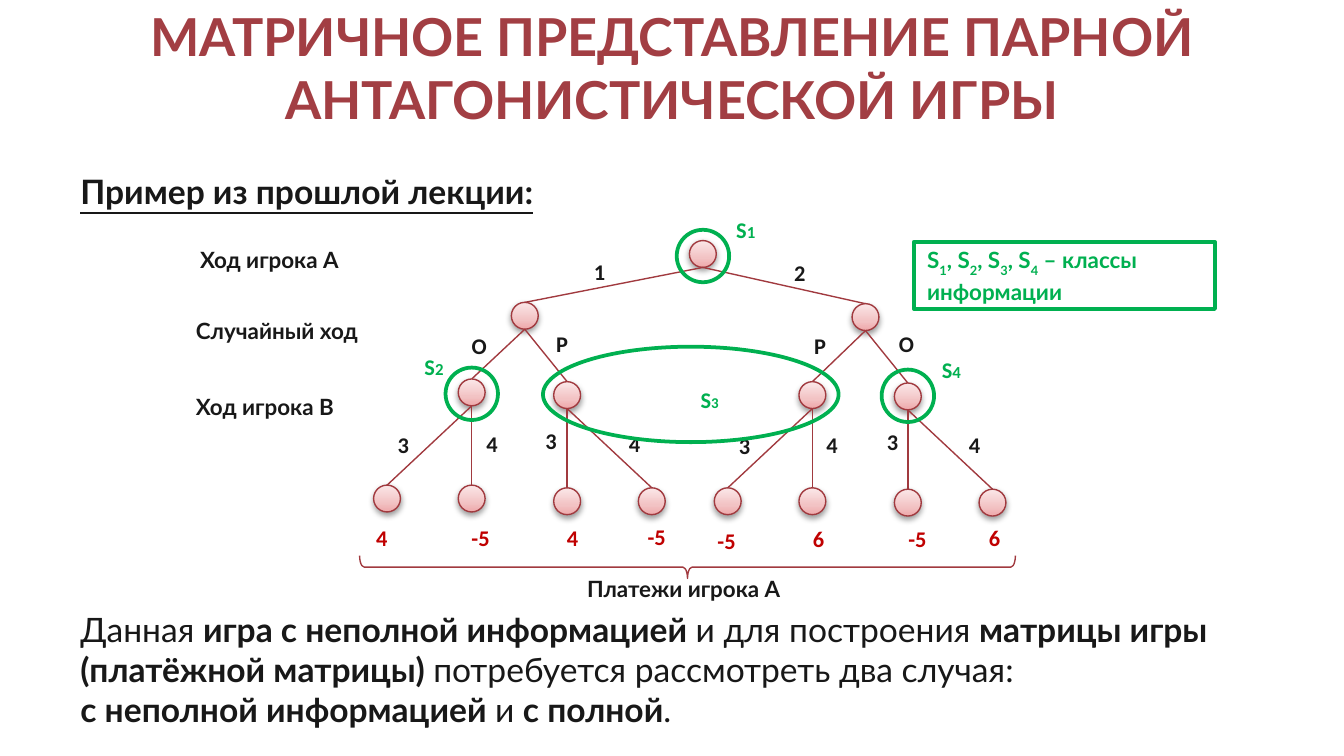
from typing import NamedTuple

from lxml import etree
from pptx import Presentation
from pptx.dml.color import RGBColor
from pptx.enum.shapes import MSO_CONNECTOR, MSO_SHAPE
from pptx.enum.text import MSO_ANCHOR, PP_ALIGN
from pptx.oxml import parse_xml
from pptx.oxml.ns import nsdecls, qn
from pptx.util import Inches, Pt

STRAIGHT = MSO_CONNECTOR.STRAIGHT
NODE_SHAPE, OVAL = MSO_SHAPE.FLOWCHART_CONNECTOR, MSO_SHAPE.OVAL
BOX, BRACE = MSO_SHAPE.RECTANGLE, MSO_SHAPE.RIGHT_BRACE
MIDDLE, LEFT, CENTER = MSO_ANCHOR.MIDDLE, PP_ALIGN.LEFT, PP_ALIGN.CENTER

COLUMNS, ROWS = 100, 56.25
INK, RED, GREEN, WINE, TITLE, WHITE = "181818", "C00000", "00B050", "A13A3F", "A23E43", "FFFFFF"
BLUSH = ((0, "EEA8AA"), (35, "F2C3C4"), (100, "FBE7E8"))
NODE_SIZE, RING_SIZE, LEAF_DROP, LEAF_STEP = 2, 3.9, 7.9, 6.3


class Area(NamedTuple):
    left: float
    top: float
    width: float
    height: float


class Run(NamedTuple):
    text: str
    size: float | None = None
    bold: bool | None = None
    subscript: bool = False


class Style(NamedTuple):
    size: float
    color: str = INK
    bold: bool = True
    face: str = "Lato"
    align: PP_ALIGN = LEFT
    underline: bool = False


class Node(NamedTuple):
    col: float
    row: float


class Label(NamedTuple):
    text: str
    col: float
    row: float


ROOT = Node(52.3, 17.9)
CHANCE = (Node(39.05, 22.5), Node(64.4, 22.6))
INFO = (Node(35.1, 28.2), Node(42.2, 28.4), Node(60.45, 28.4), Node(67.55, 28.5))
LEAF_SIDES = (-1, 1, -1, 1)

MOVES = (
    Label("1", 43.2, 18.7), Label("2", 58.1, 18.8),
    Label("О", 34.1, 24.2), Label("Р", 40.4, 24.1), Label("Р", 59.6, 24.2), Label("О", 65.9, 24.1),
    Label("3", 28.6, 31.6), Label("4", 35.2, 31.5), Label("3", 39.6, 31.3), Label("4", 45.8, 31.5),
    Label("3", 54, 31.7), Label("4", 60.5, 31.6), Label("3", 65, 31.4), Label("4", 71.1, 31.6),
)
PAYOFFS = (
    Label("4", 27, 38.5), Label("-5", 34.1, 38.5), Label("4", 41.2, 38.5), Label("-5", 47.2, 38.4),
    Label("-5", 52.4, 38.7), Label("6", 59.5, 38.6), Label("-5", 66.6, 38.6), Label("6", 72.6, 38.5),
)
CLASSES = (Label("S1", 53.8, 15.6), Label("S2", 30.6, 25.8), Label("S4", 69.1, 26))
RINGS = (Node(50.35, 17.1), Node(33.15, 27.35), Node(65.6, 27.5))
CAPTIONS = (
    (Area(13.9, 17.8, 14.7, 3), "Ход игрока А"),
    (Area(13.6, 23.1, 16, 3), "Случайный ход"),
    (Area(13.6, 28.8, 14.4, 3), "Ход игрока B"),
    (Area(42.7, 42.3, 19.7, 3), "Платежи игрока А"),
)
LEGEND = [part for number in "1234" for part in
          (Run("S" if number == "1" else ", S"), Run(number, subscript=True))]
LEGEND.append(Run(" – классы информации"))
CONCLUSION = (
    (Run("Данная "), Run("игра с неполной информацией ", bold=True), Run("и для построения "),
     Run("матрицы игры (платёжной матрицы) ", bold=True),
     Run("потребуется рассмотреть два случая:")),
    (Run("с неполной информацией ", bold=True), Run("и "), Run("с полной", bold=True), Run(".")),
)


def grid(count: float) -> int:
    """Return the length of a number of grid columns or rows."""
    return Inches(count * 10 / COLUMNS)


def rgb(color: str) -> RGBColor:
    """Return a colour from its hex string."""
    return RGBColor.from_string(color)


def write(shape, paragraphs, style: Style, wrap: bool = True) -> None:
    """Fill a shape with styled paragraphs of runs."""
    frame = shape.text_frame
    frame.word_wrap = wrap
    for index, runs in enumerate(paragraphs):
        paragraph = frame.add_paragraph() if index else frame.paragraphs[0]
        paragraph.alignment = style.align
        font = paragraph.font
        font.size, font.bold, font.name = Pt(style.size), style.bold, style.face
        font.underline = style.underline
        font.color.rgb = rgb(style.color)
        for part in runs:
            run = paragraph.add_run()
            run.text = part.text
            if part.size:
                run.font.size = Pt(part.size)
            if part.bold is not None:
                run.font.bold = part.bold
            if part.subscript:
                run.font._element.set("baseline", "-30000")


def add_text(slide, area: Area, paragraphs, style: Style, wrap: bool = True):
    """Add a text box."""
    box = slide.shapes.add_textbox(*map(grid, area))
    write(box, paragraphs, style, wrap)
    return box


def add_label(slide, label: Label, runs, color: str) -> None:
    """Add a short unwrapped label of the tree."""
    area = Area(label.col, label.row, 2.4 + 0.5 * len(label.text), 3)
    add_text(slide, area, [runs], Style(12, color, face="Calibri"), wrap=False)


def add_outline(slide, preset, area: Area, color: str, weight: float, fill: str | None = None):
    """Add an outlined preset shape, hollow unless a fill is given."""
    shape = slide.shapes.add_shape(preset, *map(grid, area))
    shape.shadow.inherit = False
    if fill:
        shape.fill.solid()
        shape.fill.fore_color.rgb = rgb(fill)
    else:
        shape.fill.background()
    shape.line.color.rgb = rgb(color)
    shape.line.width = Pt(weight)
    return shape


def add_node(slide, node: Node) -> None:
    """Add a tree node with a blush gradient and a soft shadow."""
    area = Area(node.col - NODE_SIZE / 2, node.row, NODE_SIZE, NODE_SIZE)
    properties = add_outline(slide, NODE_SHAPE, area, WINE, 0.75)._element.spPr
    stops = "".join(f'<a:gs pos="{share * 1000}"><a:srgbClr val="{color}"/></a:gs>'
                    for share, color in BLUSH)
    properties.replace(properties.find(qn("a:noFill")), parse_xml(
        f'<a:gradFill {nsdecls("a")} rotWithShape="1"><a:gsLst>{stops}</a:gsLst>'
        '<a:lin ang="16200000" scaled="0"/></a:gradFill>'))
    properties.find(qn("a:effectLst")).append(parse_xml(
        f'<a:outerShdw {nsdecls("a")} blurRad="40000" dist="20000" dir="5400000" rotWithShape="0">'
        '<a:srgbClr val="000000"><a:alpha val="38000"/></a:srgbClr></a:outerShdw>'))


def add_branch(slide, parent: Node, child: Node) -> None:
    """Join the bottom of a parent node to the top of its child."""
    ends = (parent.col, parent.row + NODE_SIZE, child.col, child.row)
    branch = slide.shapes.add_connector(STRAIGHT, *map(grid, ends))
    branch.line.color.rgb = rgb(WINE)
    branch.line.width = Pt(0.75)
    etree.SubElement(branch._element.spPr, qn("a:effectLst"))


def add_tree(slide) -> None:
    """Draw the branches and nodes of the game tree."""
    branches = [(ROOT, chance) for chance in CHANCE]
    branches += [(CHANCE[index // 2], info) for index, info in enumerate(INFO)]
    branches += [(info, Node(info.col + shift, info.row + LEAF_DROP))
                 for info, side in zip(INFO, LEAF_SIDES) for shift in (0, side * LEAF_STEP)]
    add_node(slide, ROOT)
    for parent, child in branches:
        add_branch(slide, parent, child)
        add_node(slide, child)


def main() -> None:
    """Build the slide and save it."""
    deck = Presentation()
    deck.slide_width, deck.slide_height = grid(COLUMNS), grid(ROWS)
    slide = deck.slides.add_slide(deck.slide_layouts[6])

    title = add_text(slide, Area(5, 1.5, 90, 7),
                     [[Run("МАТРИЧНОЕ ПРЕДСТАВЛЕНИЕ ПАРНОЙ АНТАГОНИСТИЧЕСКОЙ ИГРЫ")]],
                     Style(28, TITLE, align=CENTER))
    title.text_frame.vertical_anchor = MIDDLE
    add_text(slide, Area(5, 12.2, 40.6, 5.5), [[Run("Пример из прошлой лекции:")]],
             Style(18, underline=True))

    add_tree(slide)
    for area, caption in CAPTIONS:
        add_text(slide, area, [[Run(caption)]], Style(12))
    for labels, color in ((MOVES, INK), (PAYOFFS, RED)):
        for label in labels:
            add_label(slide, label, [Run(label.text)], color)
    brace = add_outline(slide, BRACE, Area(50.3, 17.8, 1.7, 48.8), WINE, 0.75)
    brace.rotation = 90
    brace.adjustments[0], brace.adjustments[1] = 0.2, 0.5

    for ring, label in zip(RINGS, CLASSES):
        add_outline(slide, OVAL, Area(ring.col, ring.row, RING_SIZE, RING_SIZE), GREEN, 2)
        add_label(slide, label, [Run(label.text[0]), Run(label.text[1], size=9)], GREEN)
    shared_class = add_outline(slide, OVAL, Area(40.4, 25.8, 22, 7.1), GREEN, 2)
    write(shared_class, [[Run("S"), Run("3", size=8)]],
          Style(12, GREEN, face="Calibri", align=CENTER))
    shared_class.text_frame.margin_left = grid(3.8)
    shared_class.text_frame.margin_top = grid(1.3)

    legend = add_outline(slide, BOX, Area(68, 18, 22.4, 5), GREEN, 2, WHITE)
    write(legend, [LEGEND], Style(12, GREEN))
    conclusion = add_text(slide, Area(5, 44.8, 90, 10.1), CONCLUSION, Style(18, bold=False))
    conclusion.fill.solid()
    conclusion.fill.fore_color.rgb = rgb(WHITE)
    deck.save("out.pptx")


if __name__ == "__main__":
    main()
